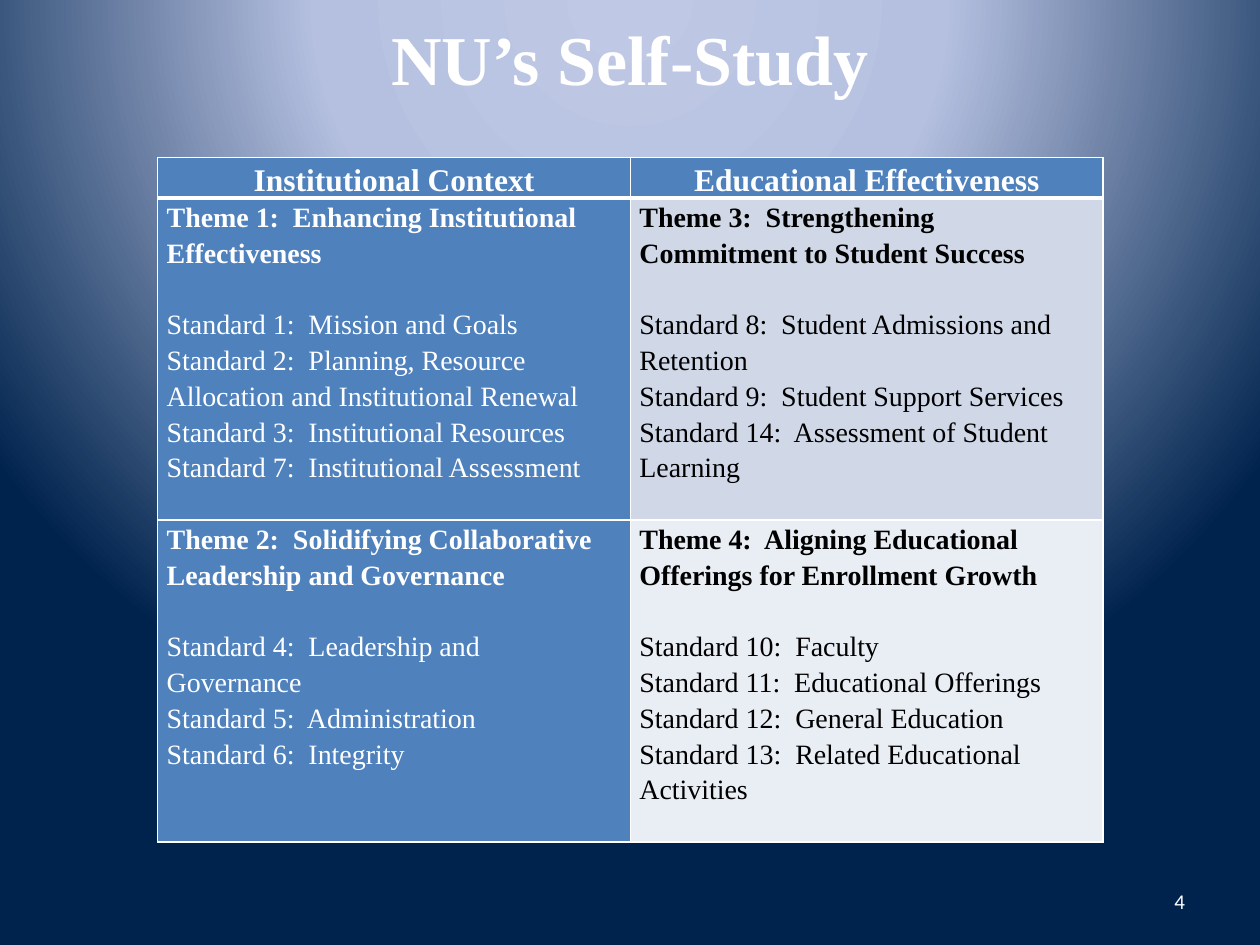
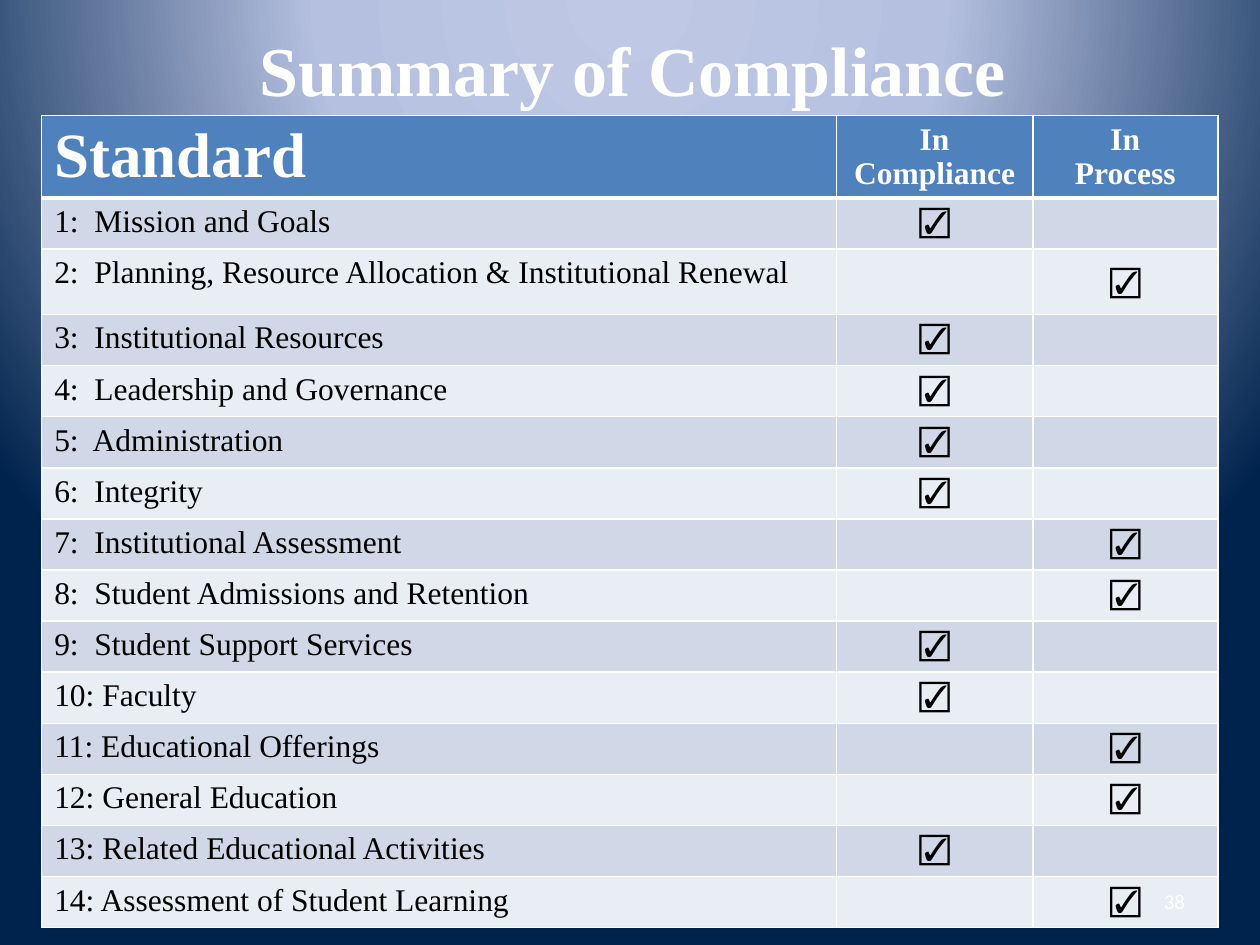
from dataclasses import dataclass

from lxml import etree
from pptx import Presentation
from pptx.dml.color import RGBColor
from pptx.enum.text import MSO_ANCHOR, PP_ALIGN
from pptx.oxml.ns import qn
from pptx.util import Cm, Pt

LEFT, MID, RIGHT = PP_ALIGN.LEFT, PP_ALIGN.CENTER, PP_ALIGN.RIGHT
TOP, CENTRE = MSO_ANCHOR.TOP, MSO_ANCHOR.MIDDLE


@dataclass(frozen=True)
class Theme:
    serif: str = "Times New Roman"
    sans: str = "Calibri"
    white: str = "FFFFFF"
    black: str = "000000"
    blue: str = "4F81BD"
    bands: tuple = ("D0D8E8", "E9EDF4")
    glow: tuple = ((0, "BFC9E5"), (40, "B5C0E0"), (100, "00234D"))
    title: int = 40
    large: int = 36
    head: int = 18
    body: int = 16
    small: int = 12
    thin: int = 1
    thick: int = 3


class Deck:
    def __init__(self, theme):
        self.theme = theme
        self.show = Presentation()
        self.show.slide_width, self.show.slide_height = Cm(25.4), Cm(19.05)
        self.slide = None
        self.glow()

    def glow(self):
        master = self.show.slide_master
        master.background.fill.solid()
        solid = master.element.find(".//" + qn("p:bgPr")).find(qn("a:solidFill"))
        grad = etree.Element(qn("a:gradFill"), rotWithShape="1")
        stops = etree.SubElement(grad, qn("a:gsLst"))
        for pos, tint in self.theme.glow:
            stop = etree.SubElement(stops, qn("a:gs"), pos=str(pos * 1000))
            etree.SubElement(stop, qn("a:srgbClr"), val=tint)
        ring = etree.SubElement(grad, qn("a:path"), path="circle")
        etree.SubElement(ring, qn("a:fillToRect"),
                         l="50000", t="-80000", r="50000", b="180000")
        solid.getparent().replace(solid, grad)

    def phrase(self, para, text, size, tint, bold=False, align=LEFT, face=None):
        para.alignment = align
        run = para.add_run()
        run.text = text
        font = run.font
        font.name = face or self.theme.serif
        font.size, font.bold = Pt(size), bold
        font.color.rgb = RGBColor.from_string(tint)

    def start(self, text, left, top):
        self.slide = self.show.slides.add_slide(self.show.slide_layouts[5])
        box = self.slide.shapes.title
        box.left, box.top, box.width, box.height = Cm(left), Cm(top), Cm(22.86), Cm(3.18)
        box.text_frame.vertical_anchor = CENTRE
        self.phrase(box.text_frame.paragraphs[0], text, self.theme.title,
                    self.theme.white, True, MID)

    def number(self, text):
        box = self.slide.shapes.add_textbox(Cm(18.21), Cm(17.65), Cm(5.93), Cm(1.02))
        frame = box.text_frame
        frame.word_wrap = True
        frame.vertical_anchor = CENTRE
        self.phrase(frame.paragraphs[0], text, self.theme.small, self.theme.white,
                    align=RIGHT, face=self.theme.sans)

    def grid(self, left, top, cols, rows):
        table = self.slide.shapes.add_table(
            len(rows), len(cols), Cm(left), Cm(top), Cm(sum(cols)), Cm(sum(rows))).table
        for col, width in zip(table.columns, cols):
            col.width = Cm(width)
        for row, height in zip(table.rows, rows):
            row.height = Cm(height)
        for r in range(len(rows)):
            for c in range(len(cols)):
                self.edge(table.cell(r, c), r)
                self.paint(table.cell(r, c),
                           self.theme.bands[(r - 1) % 2] if r else self.theme.blue)
        return table

    def edge(self, cell, row):
        props = cell._tc.get_or_add_tcPr()
        thick = {0: "lnB", 1: "lnT"}.get(row)
        for spot, side in enumerate(("lnL", "lnR", "lnT", "lnB")):
            width = self.theme.thick if side == thick else self.theme.thin
            line = etree.Element(qn("a:" + side), w=str(Pt(width)))
            fill = etree.SubElement(line, qn("a:solidFill"))
            etree.SubElement(fill, qn("a:srgbClr"), val=self.theme.white)
            props.insert(spot, line)

    def paint(self, cell, tint):
        cell.fill.solid()
        cell.fill.fore_color.rgb = RGBColor.from_string(tint)

    def fill(self, cell, lines, size, tint, bold=False, align=LEFT, anchor=TOP):
        cell.vertical_anchor = anchor
        frame = cell.text_frame
        for spot, text in enumerate(lines):
            para = frame.add_paragraph() if spot else frame.paragraphs[0]
            self.phrase(para, text, size, tint, bold, align)

    def tight(self, cell):
        cell.margin_left = cell.margin_right = Cm(0.18)
        cell.margin_top = cell.margin_bottom = 0
        for para in cell.text_frame.paragraphs:
            para.line_spacing = 1.15


THEMES = (
    (("Theme 1:  Enhancing Institutional Effectiveness",
      "Standard 1:  Mission and Goals",
      "Standard 2:  Planning, Resource Allocation and Institutional Renewal",
      "Standard 3:  Institutional Resources",
      "Standard 7:  Institutional Assessment"),
     ("Theme 3:  Strengthening Commitment to Student Success",
      "Standard 8:  Student Admissions and Retention",
      "Standard 9:  Student Support Services",
      "Standard 14:  Assessment of Student Learning")),
    (("Theme 2:  Solidifying Collaborative Leadership and Governance",
      "Standard 4:  Leadership and Governance",
      "Standard 5:  Administration",
      "Standard 6:  Integrity"),
     ("Theme 4:  Aligning Educational Offerings for Enrollment Growth",
      "Standard 10:  Faculty",
      "Standard 11:  Educational Offerings",
      "Standard 12:  General Education",
      "Standard 13:  Related Educational Activities")),
)

GOALS = (
    "1:  Mission and Goals",
    "2:  Planning, Resource Allocation & Institutional Renewal",
    "3:  Institutional Resources",
    "4:  Leadership and Governance",
    "5:  Administration",
    "6:  Integrity",
    "7:  Institutional Assessment",
    "8:  Student Admissions and Retention",
    "9:  Student Support Services",
    "10: Faculty",
    "11: Educational Offerings",
    "12: General Education",
    "13: Related Educational Activities",
    "14: Assessment of Student Learning",
)
PENDING = {2, 7, 8, 11, 12, 14}


def study(deck):
    theme = deck.theme
    deck.start("NU’s Self-Study", 1.27, -0.43)
    table = deck.grid(3.18, 3.18, [9.53] * 2, [0.81] + [6.49] * 2)
    for c, text in enumerate(("Institutional Context", "Educational Effectiveness")):
        deck.fill(table.cell(0, c), [text], theme.head, theme.white, True, MID)
        deck.tight(table.cell(0, c))
    for r, pair in enumerate(THEMES, 1):
        deck.paint(table.cell(r, 0), theme.blue)
        for c, lines in enumerate(pair):
            cell = table.cell(r, c)
            deck.fill(cell, lines, theme.body, (theme.white, theme.black)[c])
            deck.tight(cell)
            first = cell.text_frame.paragraphs[0]
            first.runs[0].font.bold = True
            first.space_after = Pt(20.4)
    deck.number("4")


def summary(deck):
    theme = deck.theme
    deck.start("Summary of Compliance", 1.32, -0.2)
    rows = [1.66] + [1.32 if n == 2 else 1.03 for n in range(1, len(GOALS) + 1)]
    table = deck.grid(0.84, 2.33, [16.02, 3.96, 3.73], rows)
    deck.fill(table.cell(0, 0), ["Standard"], theme.large, theme.white, True)
    for c, lines in enumerate((["In Compliance"], ["In", "Process"]), 1):
        deck.fill(table.cell(0, c), lines, theme.head, theme.white, True, MID)
    for n, goal in enumerate(GOALS, 1):
        deck.fill(table.cell(n, 0), [goal], theme.head, theme.black)
        deck.fill(table.cell(n, 2 if n in PENDING else 1), ["☑"], theme.head,
                  theme.black, align=MID, anchor=CENTRE if n == 2 else TOP)
    deck.number("38")


def main():
    deck = Deck(Theme())
    study(deck)
    summary(deck)
    deck.show.save("out.pptx")


if __name__ == "__main__":
    main()
